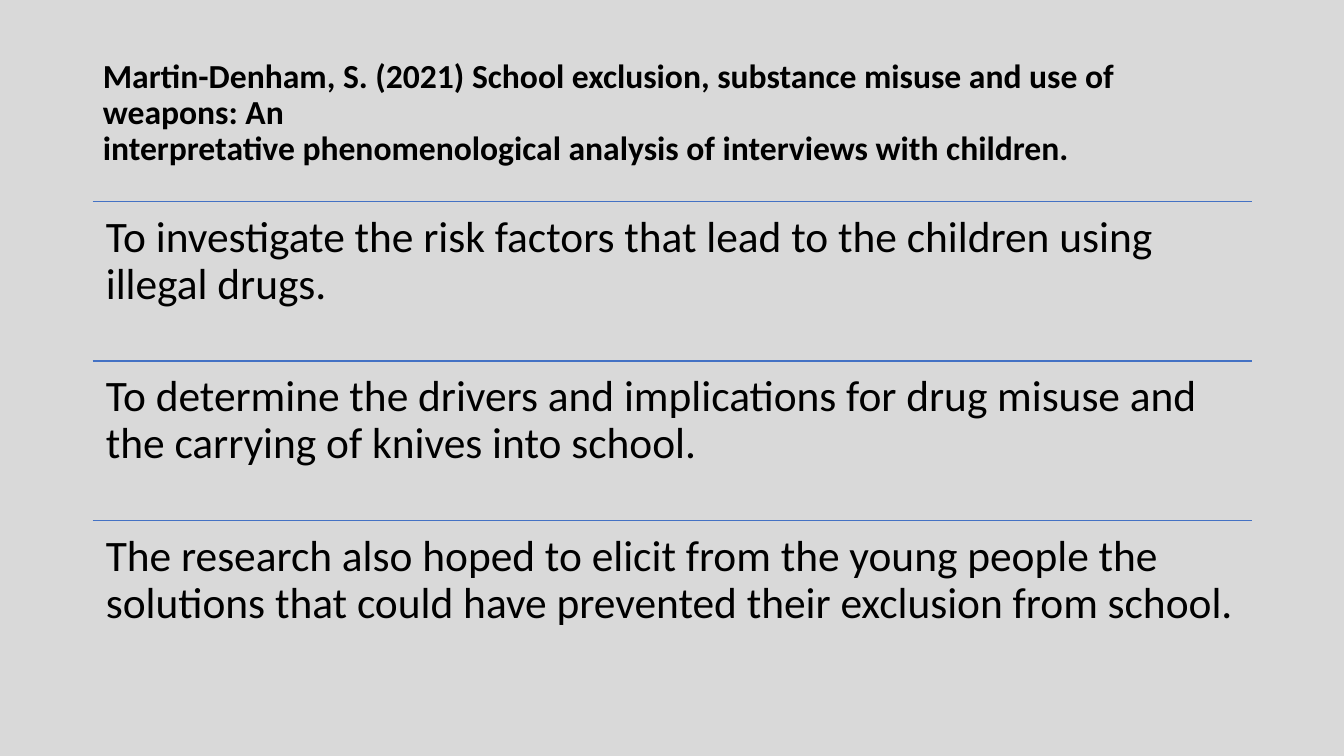
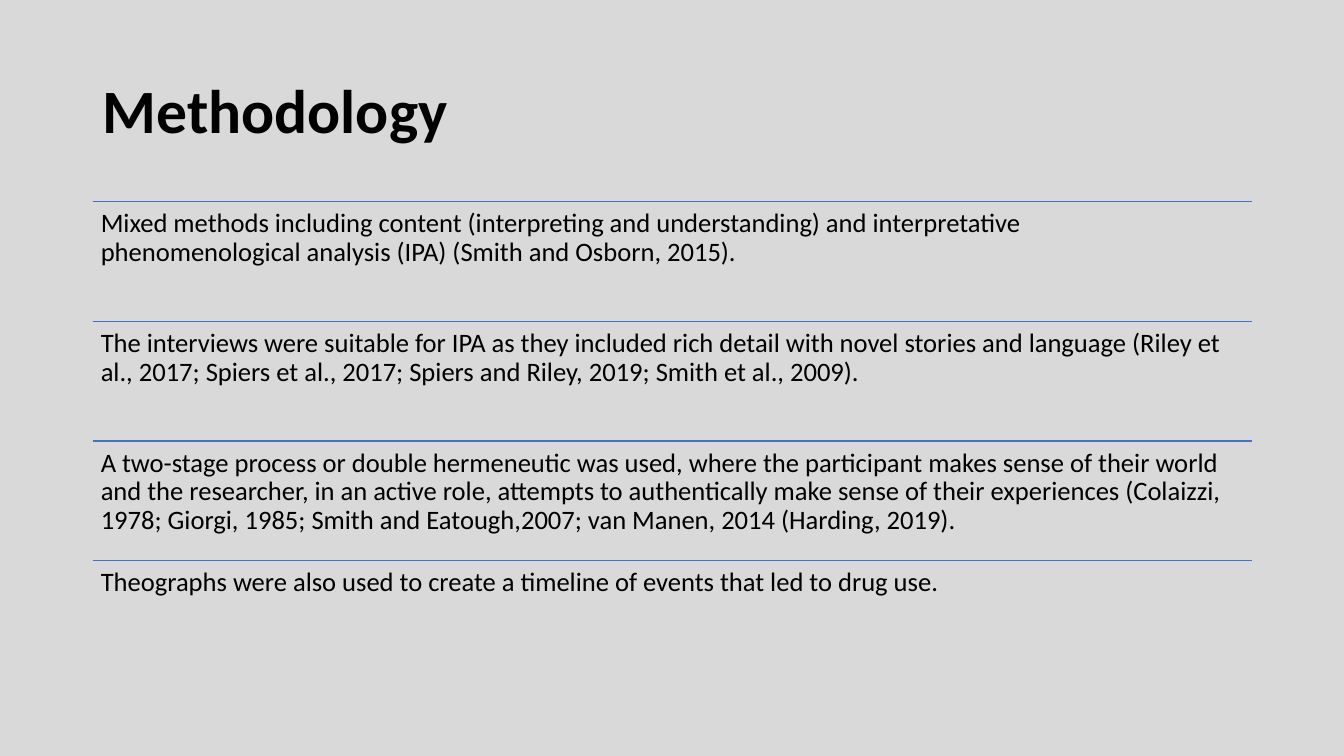
from dataclasses import dataclass

from lxml import etree
from pptx import Presentation
from pptx.dml.color import RGBColor
from pptx.enum.shapes import MSO_CONNECTOR
from pptx.enum.text import MSO_ANCHOR, MSO_AUTO_SIZE, PP_ALIGN
from pptx.oxml.ns import qn
from pptx.util import Inches, Pt


@dataclass(frozen=True)
class Theme:
    font: str = "Calibri"
    background: RGBColor = RGBColor(0xD9, 0xD9, 0xD9)
    text: RGBColor = RGBColor(0, 0, 0)
    rule: RGBColor = RGBColor(0x44, 0x72, 0xC4)
    rule_width: float = 1
    line_spacing: float = 0.9
    heading_size: int = 44
    citation_size: int = 24
    large_size: int = 31
    small_size: int = 19


THEME = Theme()

# Shared layout, in inches
LEFT, WIDTH = 0.92, 11.5
TITLE_TOP, TITLE_HEIGHT = 0.4, 1.45
ROWS_TOP, ROWS_HEIGHT = 2, 4.75

# Slide content; "~" marks a non-breaking space
CITATION = (
    "Martin-Denham, S. (2021) School exclusion, substance misuse and use of "
    "weapons: An interpretative~phenomenological~analysis~of~interviews~with~children."
)
AIMS = [
    "To investigate the risk factors that lead to the children using illegal drugs.",
    "To determine the drivers and implications for drug misuse and the carrying of "
    "knives into school.",
    "The research also hoped to elicit from the young people the solutions that could "
    "have prevented their exclusion from school.",
]
METHODS = [
    "Mixed methods including content (interpreting and~understanding) and~interpretative "
    "phenomenological~analysis (IPA) (Smith and Osborn, 2015).",
    "The interviews were suitable for IPA as they included rich~detail with novel stories "
    "and~language (Riley et al., 2017;~Spiers et al., 2017; Spiers and Riley, 2019; "
    "Smith et al., 2009).",
    "A two-stage process or double hermeneutic was used, where~the participant makes~sense "
    "of their world and the researcher,~in an active role, attempts to authentically "
    "make~sense of their~experiences (Colaizzi, 1978; Giorgi, 1985; Smith "
    "and~Eatough,2007; van~Manen, 2014 (Harding, 2019).",
    "Theographs were also used to create a timeline of events that led to drug use.",
]


def write_text(tf, text, size, bold=False):
    """Fill a text frame with one left-aligned paragraph."""
    tf.word_wrap = True
    tf.auto_size = MSO_AUTO_SIZE.NONE
    tf.text = text.replace("~", chr(160))
    p = tf.paragraphs[0]
    p.alignment = PP_ALIGN.LEFT
    p.line_spacing = THEME.line_spacing
    p.font.name = THEME.font
    p.font.size = Pt(size)
    p.font.bold = bold
    p.font.color.rgb = THEME.text


def add_titled_slide(prs, title, size):
    s = prs.slides.add_slide(prs.slide_layouts.get_by_name("Title Only"))
    sp = s.shapes.title
    sp.left, sp.top = Inches(LEFT), Inches(TITLE_TOP)
    sp.width, sp.height = Inches(WIDTH), Inches(TITLE_HEIGHT)
    write_text(sp.text_frame, title, size, bold=True)
    sp.text_frame.vertical_anchor = MSO_ANCHOR.MIDDLE
    return s


def add_rule(shapes, top):
    x, y = Inches(LEFT), Inches(top)
    line = shapes.add_connector(MSO_CONNECTOR.STRAIGHT, x, y, x + Inches(WIDTH), y)
    line.line.color.rgb = THEME.rule
    line.line.width = Pt(THEME.rule_width)
    etree.SubElement(line._element.spPr, qn("a:effectLst"))


def add_row_text(shapes, top, height, text, size, inset):
    sp = shapes.add_textbox(Inches(LEFT), Inches(top), Inches(WIDTH), Inches(height))
    tf = sp.text_frame
    tf.margin_left = tf.margin_right = Inches(inset)
    tf.margin_top = tf.margin_bottom = Inches(inset)
    tf.vertical_anchor = MSO_ANCHOR.TOP
    write_text(tf, text, size)


def add_ruled_list(s, items, size, inset):
    """Stack equal rows, each with a rule along its top edge."""
    shapes = s.shapes.add_group_shape().shapes
    height = ROWS_HEIGHT / len(items)
    for i, text in enumerate(items):
        top = ROWS_TOP + i * height
        add_rule(shapes, top)
        add_row_text(shapes, top, height, text, size, inset)


def main():
    prs = Presentation()
    prs.slide_width, prs.slide_height = Inches(13.33), Inches(7.5)
    fill = prs.slide_master.background.fill
    fill.solid()
    fill.fore_color.rgb = THEME.background

    # Aims of the study
    s = add_titled_slide(prs, CITATION, THEME.citation_size)
    add_ruled_list(s, AIMS, THEME.large_size, inset=0.13)

    # Methodology
    s = add_titled_slide(prs, "Methodology", THEME.heading_size)
    add_ruled_list(s, METHODS, THEME.small_size, inset=0.08)

    prs.save("out.pptx")


if __name__ == "__main__":
    main()
